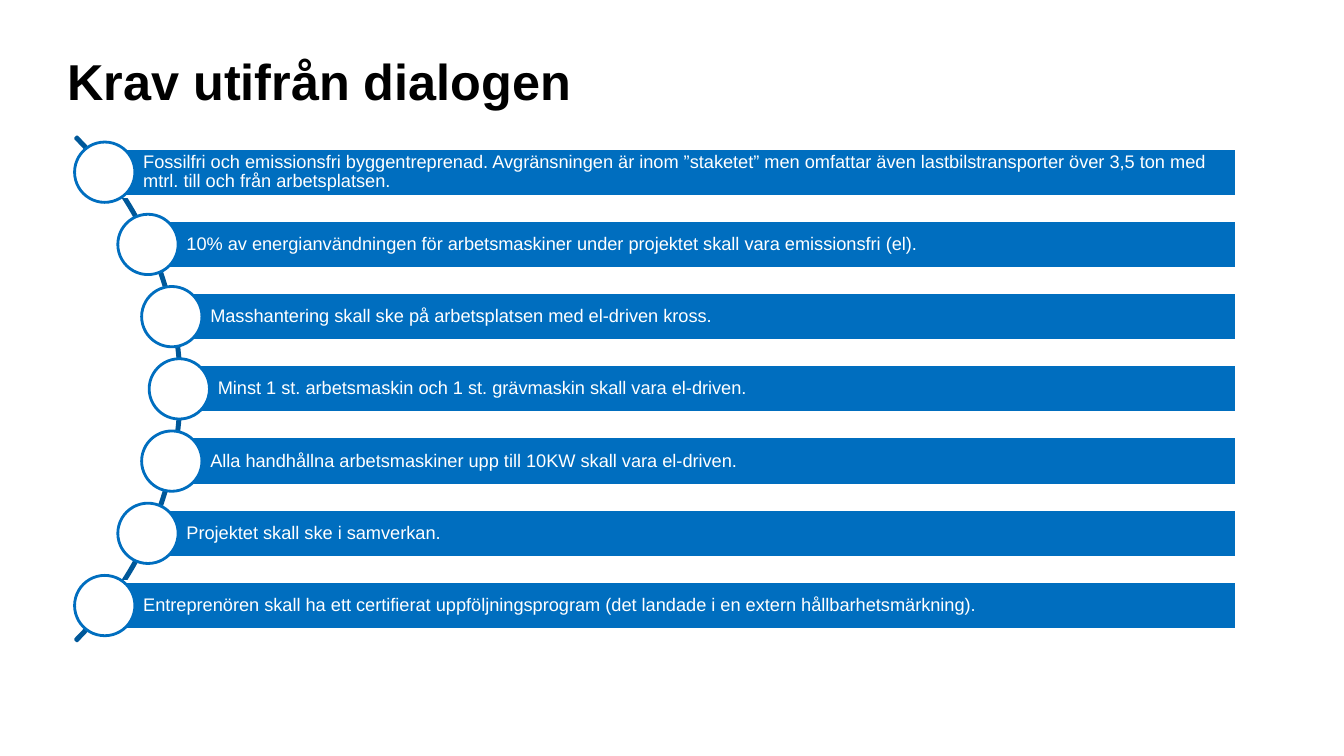
from dataclasses import dataclass

from pptx import Presentation
from pptx.dml.color import RGBColor
from pptx.enum.shapes import MSO_SHAPE
from pptx.enum.text import MSO_ANCHOR, PP_ALIGN
from pptx.util import Cm, Pt


@dataclass(frozen=True)
class Theme:
    font: str = "Arial"
    black: RGBColor = RGBColor(0x00, 0x00, 0x00)
    white: RGBColor = RGBColor(0xFF, 0xFF, 0xFF)
    blue: RGBColor = RGBColor(0x00, 0x6E, 0xBF)
    dark_blue: RGBColor = RGBColor(0x00, 0x58, 0x99)
    title_size: Pt = Pt(36)
    requirement_size: Pt = Pt(13)
    line_width: Pt = Pt(2)


theme = Theme()


def write(shape, text, size, color, bold=False, anchor=MSO_ANCHOR.TOP,
          margins=(0, 0, 0, 0), line_spacing=1.0):
    frame = shape.text_frame
    frame.word_wrap = True
    frame.vertical_anchor = anchor
    frame.margin_left, frame.margin_top, frame.margin_right, frame.margin_bottom = map(Cm, margins)
    paragraph = frame.paragraphs[0]
    paragraph.alignment = PP_ALIGN.LEFT
    paragraph.line_spacing = line_spacing
    run = paragraph.add_run()
    run.text = text
    run.font.name = theme.font
    run.font.size = size
    run.font.bold = bold
    run.font.color.rgb = color


def draw(kind, left, top, width, height, line, fill=None):
    shape = slide.shapes.add_shape(kind, Cm(left), Cm(top), Cm(width), Cm(height))
    shape.shadow.inherit = False
    if fill is None:
        shape.fill.background()
    else:
        shape.fill.solid()
        shape.fill.fore_color.rgb = fill
    shape.line.color.rgb = line
    shape.line.width = theme.line_width
    return shape


presentation = Presentation()
presentation.slide_width = Cm(33.87)
presentation.slide_height = Cm(19.05)
slide = presentation.slides.add_slide(presentation.slide_layouts[6])

title = slide.shapes.add_textbox(Cm(1.7), Cm(1.27), Cm(30.48), Cm(2.31))
write(title, "Krav utifrån dialogen", size=theme.title_size, color=theme.black, bold=True)

requirements = [
    (2.64, "Fossilfri och emissionsfri byggentreprenad. Avgränsningen är inom ”staketet” men "
           "omfattar även lastbilstransporter över 3,5 ton med mtrl. till och från arbetsplatsen."),
    (3.73, "10% av energianvändningen för arbetsmaskiner under projektet skall vara emissionsfri (el)."),
    (4.33, "Masshantering skall ske på arbetsplatsen med el-driven kross."),
    (4.52, "Minst 1 st. arbetsmaskin och 1 st. grävmaskin skall vara el-driven."),
    (4.33, "Alla handhållna arbetsmaskiner upp till 10KW skall vara el-driven."),
    (3.73, "Projektet skall ske i samverkan."),
    (2.64, "Entreprenören skall ha ett certifierat uppföljningsprogram "
           "(det landade i en extern hållbarhetsmärkning)."),
]
first_center, pitch = 4.34, 1.82
bar_right, bar_height = 31.15, 1.21
circle_size = 1.52
arc_center_x, arc_radius = -4.41, 8.98
arc_center_y = first_center + pitch * (len(requirements) - 1) / 2

arc = draw(MSO_SHAPE.BLOCK_ARC, arc_center_x - arc_radius, arc_center_y - arc_radius,
           2 * arc_radius, 2 * arc_radius, line=theme.dark_blue)
for index, angle_or_thickness in enumerate((189, 27, 0.003)):
    arc.adjustments[index] = angle_or_thickness

for row, (bar_left, requirement) in enumerate(requirements):
    center = first_center + row * pitch
    bar = draw(MSO_SHAPE.RECTANGLE, bar_left, center - bar_height / 2,
               bar_right - bar_left, bar_height, line=theme.white, fill=theme.blue)
    write(bar, requirement, size=theme.requirement_size, color=theme.white,
          anchor=MSO_ANCHOR.MIDDLE, margins=(0.97, 0.1, 0.1, 0.1), line_spacing=0.9)
    draw(MSO_SHAPE.OVAL, bar_left - circle_size / 2, center - circle_size / 2,
         circle_size, circle_size, line=theme.blue, fill=theme.white)

presentation.save("out.pptx")
